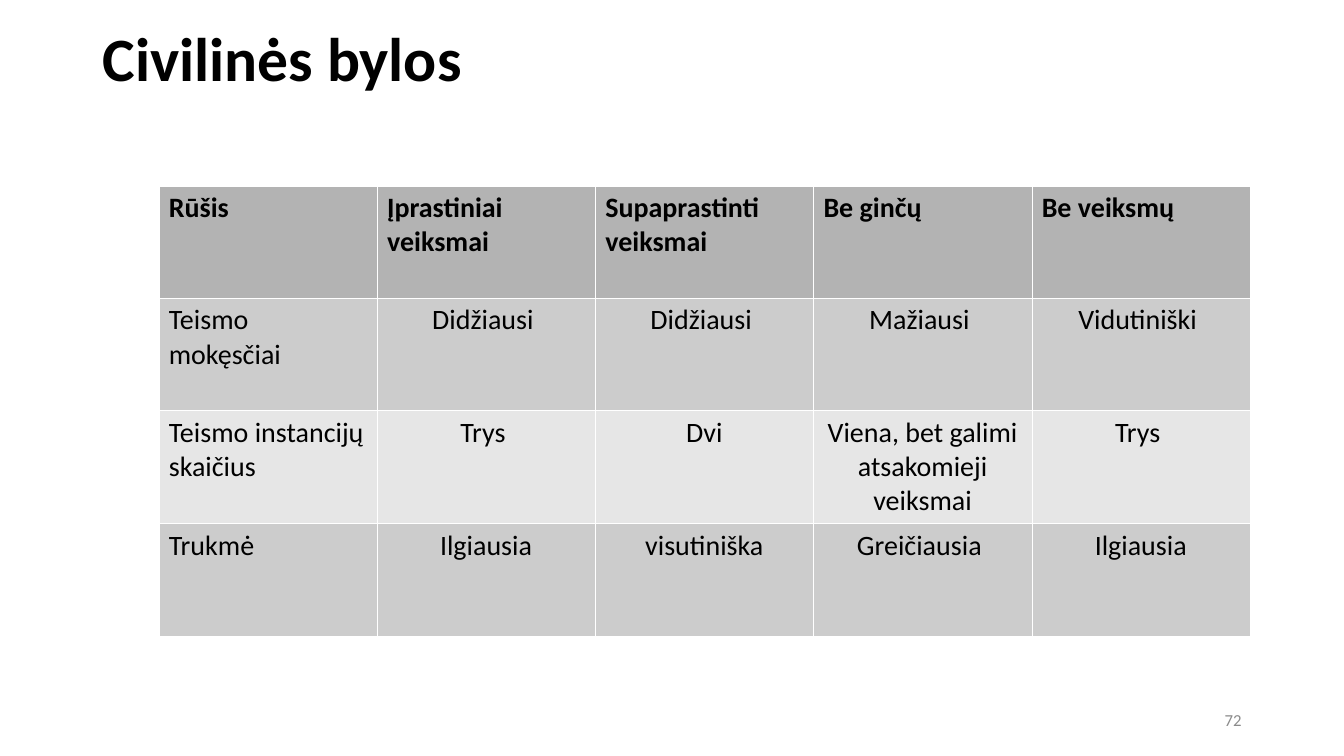
from dataclasses import dataclass
from lxml.etree import SubElement
from pptx import Presentation
from pptx.dml.color import RGBColor
from pptx.enum.text import MSO_ANCHOR as Anchor, MSO_AUTO_SIZE as AutoSize, PP_ALIGN as Align
from pptx.oxml.ns import qn
from pptx.util import Cm, Pt


@dataclass(frozen=True)
class Theme:
    """Colours, font and type sizes of the deck."""
    font: str = "Calibri"
    ink: str = "000000"
    muted: str = "8B8B8B"
    border: str = "FFFFFF"
    header: str = "B3B3B3"
    bands: tuple = ("CCCCCC", "E6E6E6")
    title_size: int = 44
    table_size: int = 20
    number_size: int = 12


CASE_TYPES = [
    ["Rūšis", "Įprastiniai veiksmai", "Supaprastinti veiksmai", "Be ginčų", "Be veiksmų"],
    ["Teismo mokęsčiai", "Didžiausi ", "Didžiausi ", "Mažiausi ", "Vidutiniški "],
    ["Teismo instancijų skaičius", "Trys ", "Dvi",
     "Viena, bet galimi atsakomieji veiksmai", "Trys "],
    ["Trukmė", "Ilgiausia", "visutiniška", "Greičiausia ", "Ilgiausia"],
]


class SlideBuilder:
    """Adds styled elements to one slide."""

    def __init__(self, slide, theme):
        """Keep the slide and its theme."""
        self.slide = slide
        self.theme = theme

    def add_text(self, frame, text, size, color, bold=False, **para_format):
        """Fill a text frame with one formatted paragraph."""
        para = frame.paragraphs[0]
        for name, value in para_format.items():
            setattr(para, name, value)
        span = para.add_run()
        span.text = text
        font_format = {"name": self.theme.font, "size": Pt(size), "bold": bold}
        for name, value in font_format.items():
            setattr(span.font, name, value)
        span.font.color.rgb = RGBColor.from_string(color)

    def place(self, box, left, top, width, height):
        """Position a text shape and centre its text vertically."""
        position = {"left": left, "top": top, "width": width, "height": height}
        for name, value in position.items():
            setattr(box, name, Cm(value))
        frame_format = {"word_wrap": True, "auto_size": AutoSize.NONE,
                        "vertical_anchor": Anchor.MIDDLE}
        for name, value in frame_format.items():
            setattr(box.text_frame, name, value)
        return box.text_frame

    def title(self, text, *position):
        """Format the title placeholder."""
        frame = self.place(self.slide.shapes.title, *position)
        self.add_text(frame, text, self.theme.title_size, self.theme.ink, True,
                      alignment=Align.LEFT, line_spacing=0.9)

    def page_number(self, text, *position):
        """Add the page number."""
        box = self.slide.shapes.add_textbox(*map(Cm, position))
        self.add_text(self.place(box, *position), text, self.theme.number_size,
                      self.theme.muted, alignment=Align.RIGHT)

    def border(self, cell):
        """Draw hairlines on all sides of a cell, ahead of its fill."""
        properties = cell._tc.get_or_add_tcPr()
        for side in ("lnL", "lnR", "lnT", "lnB"):
            line = SubElement(properties, qn(f"a:{side}"), w=str(Pt(0.06)))
            fill = SubElement(line, qn("a:solidFill"))
            SubElement(fill, qn("a:srgbClr"), val=self.theme.border)

    def table(self, rows, left, top, column_width, row_height):
        """Add a table with a header row and banded body rows."""
        columns = len(rows[0])
        grid = self.slide.shapes.add_table(
            len(rows), columns, Cm(left), Cm(top),
            Cm(column_width * columns), Cm(row_height * len(rows))).table
        for row_index, texts in enumerate(rows):
            is_header = row_index == 0
            color = self.theme.header if is_header else self.theme.bands[(row_index - 1) % 2]
            for column_index, text in enumerate(texts):
                cell = grid.cell(row_index, column_index)
                self.border(cell)
                cell.fill.solid()
                cell.fill.fore_color.rgb = RGBColor.from_string(color)
                align = Align.LEFT if is_header or column_index == 0 else Align.CENTER
                self.add_text(cell.text_frame, text, self.theme.table_size,
                              self.theme.ink, is_header, alignment=align)


def main():
    """Build and save the deck."""
    deck = Presentation()
    deck.slide_width, deck.slide_height = Cm(33.87), Cm(19.05)
    page = SlideBuilder(deck.slides.add_slide(deck.slide_layouts[5]), Theme())
    page.title("Civilinės bylos", 2.33, -0.28, 29.21, 3.66)
    page.table(CASE_TYPES, 4, 4.68, 5.5, 2.83)
    page.page_number("72", 23.92, 17.65, 7.62, 1)
    deck.save("out.pptx")


if __name__ == "__main__":
    main()
